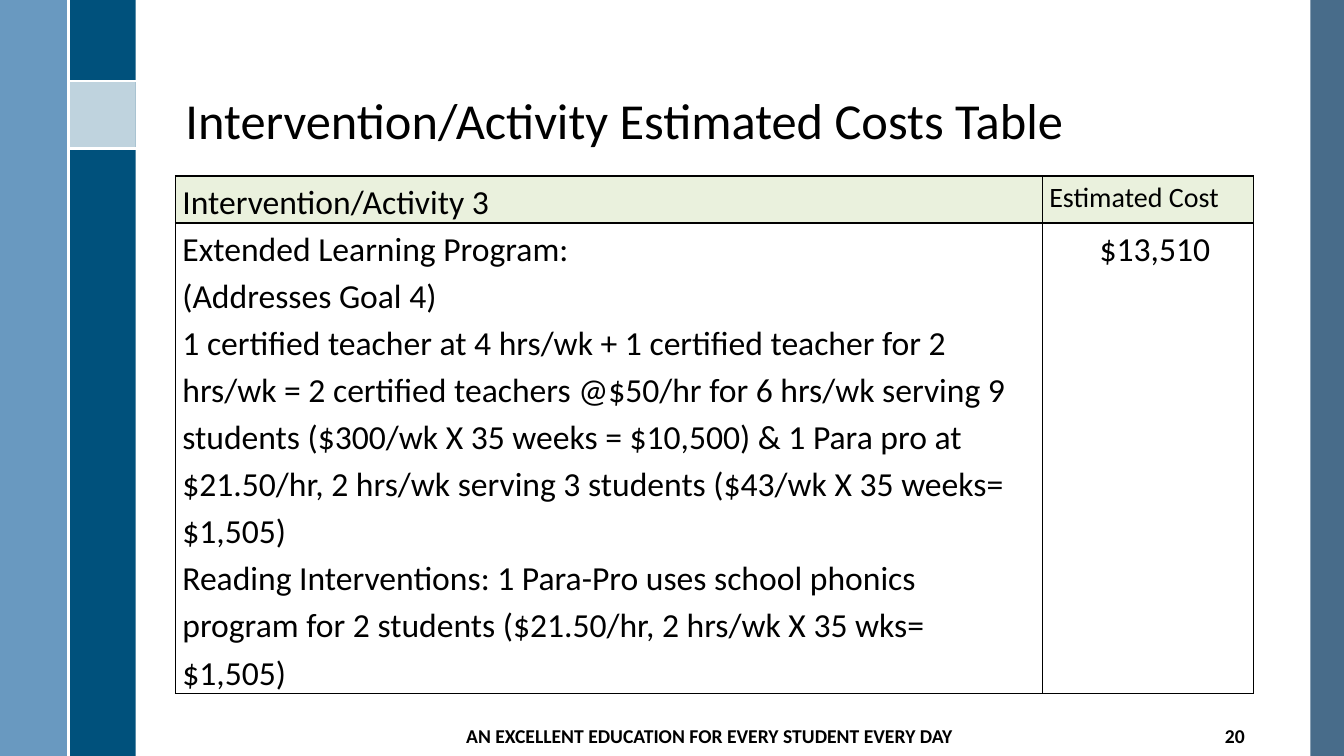
from dataclasses import dataclass

from lxml import etree
from pptx import Presentation, util as u
from pptx.dml.color import RGBColor
from pptx.enum import shapes, text
from pptx.oxml import ns

WHITE = RGBColor(0xFF, 0xFF, 0xFF)
BLACK = RGBColor(0x00, 0x00, 0x00)
SLATE = RGBColor(0x35, 0x5D, 0x7E)
NAVY = RGBColor(0x00, 0x51, 0x7C)
SKY = RGBColor(0x55, 0x8B, 0xB8)
PALE_GREEN = RGBColor(0xEA, 0xF1, 0xDD)
FONT = "Calibri"
COLS, ROWS = 20, 11.25  # square grid units across and down the slide
UNIT = 13.33 / COLS
LEFT, WIDTH = 2.61, 16.05  # content column
BAND = 1.02  # left edge of the navy band


@dataclass(frozen=True)
class Panel:
    x: float
    y: float
    w: float
    h: float
    color: RGBColor
    opacity: int


@dataclass(frozen=True)
class Rule:
    x1: float
    y1: float
    x2: float
    y2: float


@dataclass(frozen=True)
class Label:
    words: str
    x: float
    w: float
    align: text.PP_ALIGN


@dataclass(frozen=True)
class Cell:
    row: int
    col: int
    paragraphs: tuple[str, ...]
    size: int
    indent: float = 0
    after: int = 0


PANELS = [
    Panel(19.5, 0, 0.5, ROWS, SLATE, 90),
    Panel(BAND, 0, 1, ROWS, NAVY, 100),
    Panel(0, 0, 1, ROWS, SKY, 88),
    Panel(BAND, 1.21, 1, 1, WHITE, 75),
]
RULES = [
    Rule(BAND, 1.21, BAND + 1, 1.21),
    Rule(BAND, 2.21, BAND + 1, 2.21),
    Rule(BAND, 0, BAND, ROWS),
]
LABELS = [
    Label("AN EXCELLENT EDUCATION FOR EVERY STUDENT EVERY DAY", 6.75, 7.62,
          text.PP_ALIGN.CENTER),
    Label("20", 17.67, 1, text.PP_ALIGN.RIGHT),
]
CELLS = [
    Cell(0, 0, ("Intervention/Activity 3",), 24),
    Cell(0, 1, ("Estimated Cost",), 20),
    Cell(1, 0, (
        "Extended Learning Program:",
        "(Addresses Goal 4)",
        "1 certified teacher at 4 hrs/wk + 1 certified teacher for 2 hrs/wk = "
        "2 certified teachers @$50/hr for 6 hrs/wk serving 9 students "
        "($300/wk X 35 weeks = $10,500) & 1 Para pro at $21.50/hr, 2 hrs/wk "
        "serving 3 students ($43/wk X 35 weeks= $1,505)",
        "Reading Interventions: 1 Para-Pro uses school phonics program for "
        "2 students ($21.50/hr, 2 hrs/wk X 35 wks= $1,505)",
    ), 24),
    Cell(1, 1, ("$13,510",), 24, indent=0.5, after=10),
]


def grid(*units: float) -> list[u.Length]:
    """Turn grid units into slide lengths."""
    return [u.Inches(n * UNIT) for n in units]


def style(p, size: int, bold: bool = False) -> None:
    for r in p.runs:
        r.font.name, r.font.size, r.font.bold = FONT, u.Pt(size), bold
        r.font.color.rgb = BLACK


def draw_panel(s, panel: Panel) -> None:
    sp = s.shapes.add_shape(shapes.MSO_SHAPE.RECTANGLE,
                            *grid(panel.x, panel.y, panel.w, panel.h))
    sp.shadow.inherit = False
    sp.line.fill.background()
    sp.fill.solid()
    sp.fill.fore_color.rgb = panel.color
    if panel.opacity < 100:
        color = sp.fill._xPr.find(".//" + ns.qn("a:srgbClr"))
        etree.SubElement(color, ns.qn("a:alpha"), val=str(panel.opacity * 1000))


def draw_rule(s, rule: Rule) -> None:
    line = s.shapes.add_connector(shapes.MSO_CONNECTOR.STRAIGHT,
                                  *grid(rule.x1, rule.y1, rule.x2, rule.y2))
    line.line.color.rgb = WHITE
    line.line.width = u.Pt(1.5)
    etree.SubElement(line._element.spPr, ns.qn("a:effectLst"))


def draw_title(s, words: str) -> None:
    sp = s.shapes.title
    sp.left, sp.top, sp.width, sp.height = grid(LEFT, 0.28, WIDTH, 2.04)
    tf = sp.text_frame
    tf.text = words
    tf.vertical_anchor = text.MSO_ANCHOR.BOTTOM
    p = tf.paragraphs[0]
    p.alignment = text.PP_ALIGN.LEFT
    p.line_spacing = 0.9
    style(p, 36)


def draw_label(s, label: Label) -> None:
    tf = s.shapes.add_textbox(*grid(label.x, 10.65, label.w, 0.6)).text_frame
    tf.word_wrap = True
    tf.vertical_anchor = text.MSO_ANCHOR.MIDDLE
    tf.text = label.words
    p = tf.paragraphs[0]
    p.alignment = label.align
    style(p, 14, bold=True)


def add_borders(cell) -> None:
    """Outline a cell; its borders must come before its fill."""
    tc_pr = cell._tc.get_or_add_tcPr()
    for i, side in enumerate(("a:lnL", "a:lnR", "a:lnT", "a:lnB")):
        ln = etree.Element(ns.qn(side), w=str(u.Pt(1)))
        fill = etree.SubElement(ln, ns.qn("a:solidFill"))
        etree.SubElement(fill, ns.qn("a:srgbClr"), val=str(BLACK))
        tc_pr.insert(i, ln)


def fill_cell(table, item: Cell) -> None:
    cell = table.cell(item.row, item.col)
    cell.margin_left = cell.margin_right = u.Inches(0.07)
    cell.margin_top = cell.margin_bottom = 0
    if item.row == 0:
        cell.fill.solid()
        cell.fill.fore_color.rgb = PALE_GREEN
    else:
        cell.fill.background()
    add_borders(cell)
    tf = cell.text_frame
    tf.text = "\n".join(item.paragraphs)
    for p in tf.paragraphs:
        p.line_spacing = 1.15
        p.space_after = u.Pt(item.after)
        if item.indent:
            p._p.get_or_add_pPr().set("marL", str(u.Inches(item.indent)))
        style(p, item.size, bold=False)


def draw_cost_table(s) -> None:
    heights = grid(0.7, 7)
    table = s.shapes.add_table(2, 2, *grid(LEFT, 2.62, WIDTH, 7.7)).table
    for column, width in zip(table.columns, grid(12.9, 3.15)):
        column.width = width
    for row, height in zip(table.rows, heights):
        row.height = height
    for item in CELLS:
        fill_cell(table, item)


def main() -> None:
    prs = Presentation()
    prs.slide_width, prs.slide_height = u.Inches(13.33), u.Inches(7.5)
    s = prs.slides.add_slide(prs.slide_layouts[5])
    for panel in PANELS:
        draw_panel(s, panel)
    for rule in RULES:
        draw_rule(s, rule)
    draw_title(s, "Intervention/Activity Estimated Costs Table")
    for label in LABELS:
        draw_label(s, label)
    draw_cost_table(s)
    prs.save("out.pptx")


if __name__ == "__main__":
    main()
